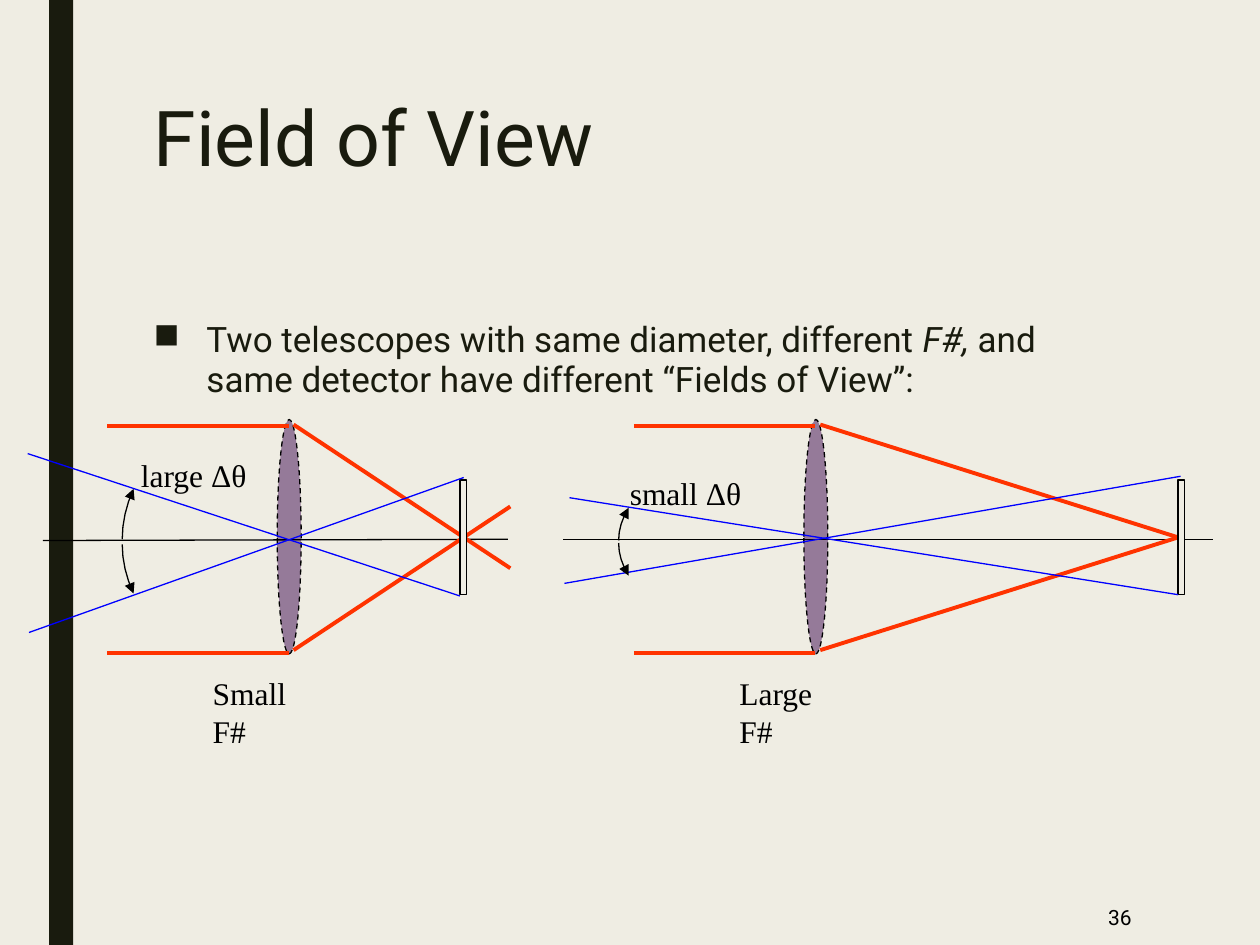
from dataclasses import dataclass

from lxml.etree import SubElement
from pptx import Presentation
from pptx.dml.color import RGBColor
from pptx.enum.dml import MSO_LINE
from pptx.enum.shapes import MSO_CONNECTOR, MSO_SHAPE
from pptx.enum.text import MSO_ANCHOR, PP_ALIGN
from pptx.oxml.ns import qn
from pptx.util import Inches, Pt


@dataclass(frozen=True)
class Theme:
    """Colours, fonts and type sizes of the slide."""
    paper: str = "EFEDE3"
    ink: str = "191B0E"
    black: str = "000000"
    lens: str = "957A99"
    light: str = "FF3300"
    chief: str = "0000FF"
    sans: str = "Roboto"
    serif: str = "Times New Roman"
    title: int = 44
    body: int = 20
    label: int = 18
    number: int = 12
    thin: float = 0.75
    thick: float = 2.25


@dataclass(frozen=True)
class Telescope:
    """Horizontal layout, field rays and labels of one telescope."""
    lens: float
    axis: tuple
    focus_ends: tuple
    ends_on_detector: bool
    detector: float
    field_rays: tuple
    arc_left: float
    arc_width: float
    arcs: tuple
    angle_label: tuple
    caption: str


THEME = Theme()
LENS_WIDTH = 0.19
DETECTOR_WIDTH = 0.05
RAY_TOP, RAY_BOTTOM = 3.38, 5.18
ARC_STEPS = 4

TELESCOPES = (
    Telescope(
        lens=2.2, axis=((0.34, 4.29), (4.03, 4.28)),
        focus_ends=((4.05, 4.51), (4.05, 4.02)), ends_on_detector=False, detector=3.65,
        field_rays=(((3.68, 3.79), (0.23, 5.02)), ((3.65, 4.73), (0.22, 3.6))),
        arc_left=0.97, arc_width=0.09, arcs=((4.28, 3.88), (4.32, 4.71)),
        angle_label=("large Δθ", 1.02, 3.57), caption="Small F#"),
    Telescope(
        lens=6.38, axis=((4.47, 4.28), (9.63, 4.28)),
        focus_ends=((9.36, 4.27), (9.36, 4.27)), ends_on_detector=True, detector=9.35,
        field_rays=(((9.37, 3.78), (4.48, 4.63)), ((9.35, 4.72), (4.52, 3.95))),
        arc_left=4.91, arc_width=0.08, arcs=((4.29, 4.03), (4.31, 4.57)),
        angle_label=("small Δθ", 4.9, 3.71), caption="Large F#"),
)


def rgb(value):
    """Turn a hex string into a colour."""
    return RGBColor.from_string(value)


def set_font(para, name, size, colour):
    """Set the font shared by all runs of a paragraph."""
    para.font.name = name
    para.font.size = Pt(size)
    para.font.color.rgb = rgb(colour)


def add_solid(page, kind, left, top, width, height, fill, outlined=True):
    """Add a filled preset shape, with a thin black outline if wanted."""
    shape = page.shapes.add_shape(
        kind, Inches(left), Inches(top), Inches(width), Inches(height))
    shape.shadow.inherit = False
    shape.fill.solid()
    shape.fill.fore_color.rgb = rgb(fill)
    if outlined:
        shape.line.color.rgb = rgb(THEME.black)
        shape.line.width = Pt(THEME.thin)
    else:
        shape.line.fill.background()
    return shape


def add_line(page, start, end, colour, width=THEME.thin):
    """Add a straight line between two points."""
    line = page.shapes.add_connector(
        MSO_CONNECTOR.STRAIGHT, *(Inches(value) for value in (*start, *end)))
    line.line.color.rgb = rgb(colour)
    line.line.width = Pt(width)
    SubElement(line._element.spPr, qn("a:effectLst"))
    return line


def add_arc(page, left, width, start, end):
    """Add a curved arrow that bends away from the optical axis."""
    steps = [step / ARC_STEPS for step in range(ARC_STEPS + 1)]
    points = [(Inches(left + width * t * t), Inches(start + (end - start) * t)) for t in steps]
    builder = page.shapes.build_freeform(*points[0])
    builder.add_line_segments(points[1:], close=False)
    arc = builder.convert_to_shape()
    arc.shadow.inherit = False
    arc.fill.background()
    arc.line.color.rgb = rgb(THEME.black)
    arc.line.width = Pt(THEME.thin)
    SubElement(arc.line._get_or_add_ln(), qn("a:tailEnd"), type="triangle")


def add_text(page, left, top, width, height, text="", wrap=True):
    """Add a text box and return its frame and first paragraph."""
    box = page.shapes.add_textbox(Inches(left), Inches(top), Inches(width), Inches(height))
    box.text_frame.word_wrap = wrap
    para = box.text_frame.paragraphs[0]
    if text:
        para.text = text
    return box.text_frame, para


def add_label(page, text, left, top):
    """Add a diagram label in the serif font."""
    para = add_text(page, left, top, 1.1, 0.4, text, wrap=False)[1]
    set_font(para, THEME.serif, THEME.label, THEME.black)


def add_title(page, text):
    """Place and format the title placeholder."""
    title = page.shapes.title
    title.left, title.top, title.width, title.height = map(Inches, (1.12, 0.75, 7.88, 1.62))
    title.text_frame.text = text
    title.text_frame.vertical_anchor = MSO_ANCHOR.TOP
    para = title.text_frame.paragraphs[0]
    para.alignment = PP_ALIGN.LEFT
    para.line_spacing = 0.89
    set_font(para, THEME.sans, THEME.title, THEME.ink)


def add_bullet(page):
    """Add the bulleted statement with its italic symbol."""
    para = add_text(page, 1.12, 2.5, 7.88, 3.92)[1]
    properties = para._p.get_or_add_pPr()
    properties.set("marL", str(Inches(0.42)))
    properties.set("indent", str(-Inches(0.42)))
    SubElement(properties, qn("a:buChar"), char="■")
    para.line_spacing = 0.94
    for text, italic in (
            ("Two telescopes with same diameter, different ", False),
            ("F#,", True),
            (" and same detector have different “Fields of View”:", False)):
        span = para.add_run()
        span.text = text
        span.font.italic = italic
    set_font(para, THEME.sans, THEME.body, THEME.ink)


def add_telescope(page, scope):
    """Draw one telescope with its rays, detector, angle and caption."""
    lens = add_solid(page, MSO_SHAPE.OVAL, scope.lens, 3.33, LENS_WIDTH, 1.86, THEME.lens)
    lens.line.dash_style = MSO_LINE.DASH
    add_line(page, *scope.axis, THEME.black)
    focused = []
    for height, exit_height, end in zip(
            (RAY_TOP, RAY_BOTTOM), (3.37, 5.16), scope.focus_ends):
        add_line(page, (scope.lens - 1.35, height), (scope.lens + 0.09, height),
                 THEME.light, THEME.thick)
        focused.append(add_line(page, (scope.lens + 0.13, exit_height), end,
                                THEME.light, THEME.thick))
    detector = add_solid(page, MSO_SHAPE.RECTANGLE, scope.detector, 3.81,
                         DETECTOR_WIDTH, 0.91, THEME.paper)
    if scope.ends_on_detector:
        for ray in focused:
            ray.end_connect(detector, 1)
    for start, end in scope.field_rays:
        add_line(page, start, end, THEME.chief)
    for start, end in scope.arcs:
        add_arc(page, scope.arc_left, scope.arc_width, start, end)
    add_label(page, *scope.angle_label)
    add_label(page, scope.caption, scope.lens - 0.61, 5.3)


def add_page_number(page, number):
    """Add the right-aligned page number."""
    frame, para = add_text(page, 7.77, 7.06, 1.31, 0.44, number)
    frame.vertical_anchor = MSO_ANCHOR.MIDDLE
    para.alignment = PP_ALIGN.RIGHT
    set_font(para, THEME.sans, THEME.number, THEME.black)


def main():
    """Build the slide and save it."""
    deck = Presentation()
    deck.slide_width, deck.slide_height = Inches(10), Inches(7.5)
    page = deck.slides.add_slide(deck.slide_layouts[5])
    page.background.fill.solid()
    page.background.fill.fore_color.rgb = rgb(THEME.paper)
    add_solid(page, MSO_SHAPE.RECTANGLE, 0.39, 0, 0.19, 7.5, THEME.ink, outlined=False)
    add_title(page, "Field of View")
    add_bullet(page)
    for scope in TELESCOPES:
        add_telescope(page, scope)
    add_page_number(page, "36")
    deck.save("out.pptx")


if __name__ == "__main__":
    main()
